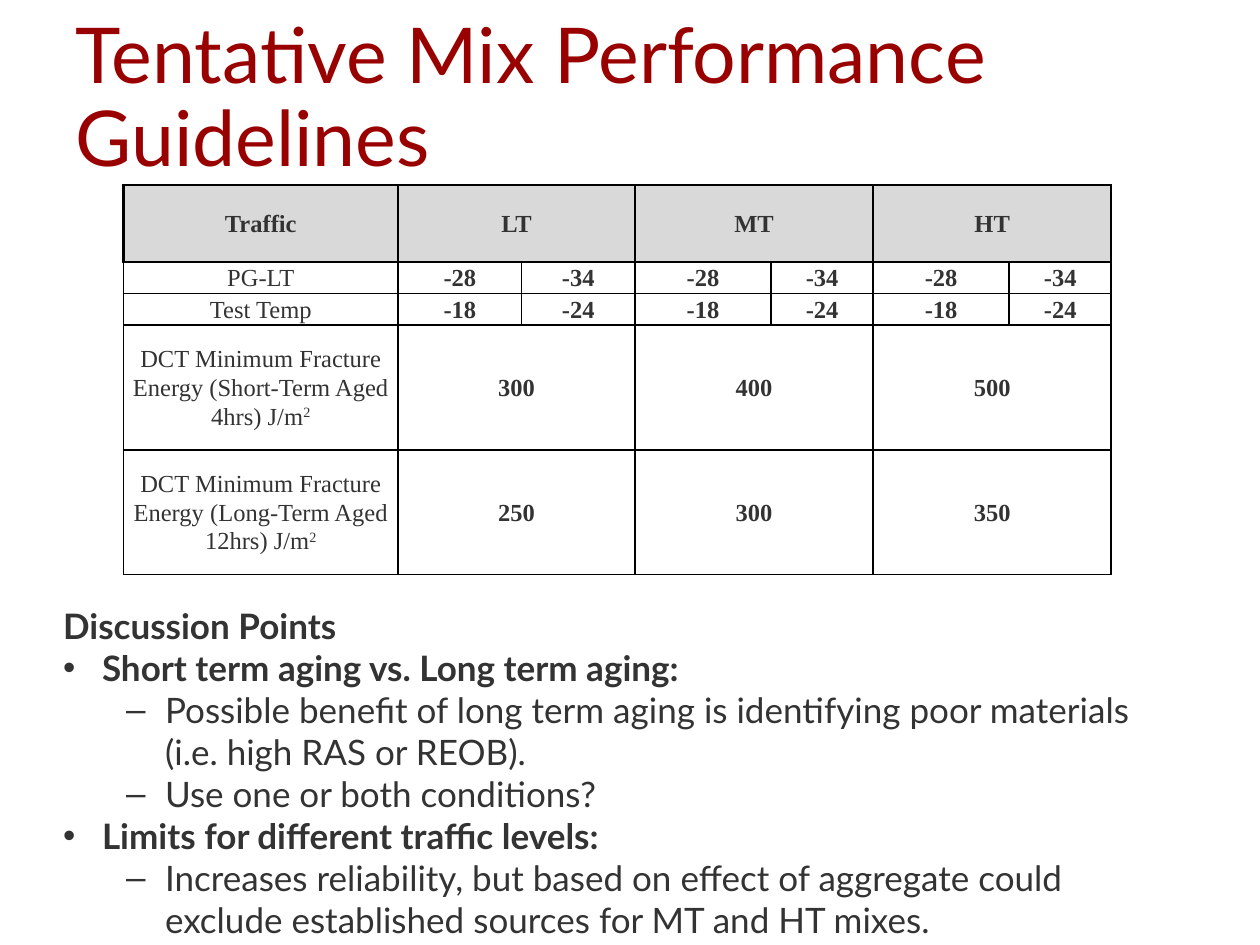
import lxml.etree
import pptx
import pptx.dml.color
import pptx.enum.text
import pptx.oxml.ns
import pptx.util

Inches = pptx.util.Inches
Pt = pptx.util.Pt
PP_ALIGN = pptx.enum.text.PP_ALIGN
MSO_ANCHOR = pptx.enum.text.MSO_ANCHOR
MSO_AUTO_SIZE = pptx.enum.text.MSO_AUTO_SIZE
qn = pptx.oxml.ns.qn

COLORS = {"title": "990000", "text": "333333", "header": "D9D9D9", "line": "000000"}

COL_WIDTHS = [2.18] + [0.98, 0.9] + [1.08, 0.81] * 2
ROW_HEIGHTS = [0.61, 0.25, 0.25, 0.99, 0.99]
ROWS = [
    ("Traffic", ["LT", "MT", "HT"]),
    ("PG-LT", ["-28", "-34"] * 3),
    ("Test Temp", ["-18", "-24"] * 3),
    ("DCT Minimum Fracture Energy (Short-Term Aged 4hrs) J/m^2", ["300", "400", "500"]),
    ("DCT Minimum Fracture Energy (Long-Term Aged 12hrs) J/m^2", ["250", "300", "350"]),
]
POINTS = [
    ("heading", "Discussion Points"),
    ("topic", "Short term aging vs. Long term aging:"),
    ("detail", "Possible benefit of long term aging is identifying poor materials "
               "(i.e. high RAS or REOB)."),
    ("detail", "Use one or both conditions?"),
    ("topic", "Limits for different traffic levels:"),
    ("detail", "Increases reliability, but based on effect of aggregate could "
               "exclude established sources for MT and HT mixes."),
]
LEVELS = {
    "heading": dict(level=0, margin=0, hanging=0, bullet=None, bold=True),
    "topic": dict(level=0, margin=0.31, hanging=0.31, bullet="•", bold=True),
    "detail": dict(level=1, margin=0.81, hanging=0.31, bullet="‒", bold=False),
}


def add_text(p, text, font="Lato", size=20, color="text", bold=False):
    """Add text to a paragraph, raising whatever follows a caret."""
    for i, part in enumerate(text.split("^")):
        r = p.add_run()
        r.text = part
        r.font.name = font
        r.font.size = Pt(size)
        r.font.bold = bold
        r.font.color.rgb = pptx.dml.color.RGBColor.from_string(COLORS[color])
        if i:
            r.font._element.set("baseline", "30000")


class Deck:
    """Hold the style and the current slide."""

    def __init__(self, prs):
        self.prs = prs
        self.s = prs.slides.add_slide(prs.slide_layouts[1])

    def place(self, sp, left, top, width, height):
        """Move and size a shape, in inches."""
        sp.left, sp.top = Inches(left), Inches(top)
        sp.width, sp.height = Inches(width), Inches(height)

    def title(self, text, *box):
        """Fill the title placeholder."""
        sp = self.s.shapes.title
        self.place(sp, *box)
        tf = sp.text_frame
        tf.auto_size = MSO_AUTO_SIZE.NONE
        tf.vertical_anchor = MSO_ANCHOR.MIDDLE
        p = tf.paragraphs[0]
        p.alignment = PP_ALIGN.LEFT
        p.line_spacing = 0.9
        add_text(p, text, size=44, color="title")

    def body(self, points, *box):
        """Fill the body placeholder with a bulleted list."""
        sp = self.s.placeholders[1]
        self.place(sp, *box)
        tf = sp.text_frame
        tf.auto_size = MSO_AUTO_SIZE.SHAPE_TO_FIT_TEXT
        for i, (kind, text) in enumerate(points):
            p = tf.add_paragraph() if i else tf.paragraphs[0]
            style = LEVELS[kind]
            p.level = style["level"]
            p.space_before = Pt(0)
            pPr = p._p.get_or_add_pPr()
            pPr.set("marL", str(Inches(style["margin"])))
            pPr.set("indent", str(-Inches(style["hanging"])))
            if style["bullet"]:
                lxml.etree.SubElement(pPr, qn("a:buChar"), char=style["bullet"])
            else:
                lxml.etree.SubElement(pPr, qn("a:buNone"))
            add_text(p, text, bold=style["bold"])

    def borders(self, cell, widths):
        """Draw the left, right, top and bottom borders of a cell."""
        tcPr = cell._tc.get_or_add_tcPr()
        for side, width in zip("LRTB", widths):
            ln = lxml.etree.SubElement(tcPr, qn("a:ln" + side), w=str(Pt(width)))
            fill = lxml.etree.SubElement(ln, qn("a:solidFill"))
            lxml.etree.SubElement(fill, qn("a:srgbClr"), val=COLORS["line"])

    def cell_text(self, cell, text, bold):
        """Write centred text in a cell."""
        p = cell.text_frame.paragraphs[0]
        p.alignment = PP_ALIGN.CENTER
        p.line_spacing = 1.06
        add_text(p, text, font="Times New Roman", size=14, bold=bold)

    def table(self, rows, left, top):
        """Add the guideline table, pairing columns where a row has three values."""
        frame = self.s.shapes.add_table(
            len(ROW_HEIGHTS), len(COL_WIDTHS), Inches(left), Inches(top),
            Inches(sum(COL_WIDTHS)), Inches(sum(ROW_HEIGHTS)))
        table = frame.table
        table.first_row = table.horz_banding = False
        for col, width in zip(table.columns, COL_WIDTHS):
            col.width = Inches(width)
        last = len(COL_WIDTHS) - 1
        for i, (label, values) in enumerate(rows):
            table.rows[i].height = Inches(ROW_HEIGHTS[i])
            header = i == 0
            for j in range(last + 1):
                cell = table.cell(i, j)
                cell.vertical_anchor = MSO_ANCHOR.MIDDLE
                cell.margin_left = cell.margin_right = Inches(0.04)
                cell.margin_top = cell.margin_bottom = 0
                self.borders(cell, (
                    1.5 if header and j == 0 else 1,
                    1.5 if header and j == last else 1,
                    1.5 if i < 2 else 1,
                    1.5 if header else 1))
                if header:
                    cell.fill.solid()
                    cell.fill.fore_color.rgb = pptx.dml.color.RGBColor.from_string(
                        COLORS["header"])
                else:
                    cell.fill.background()
            self.cell_text(table.cell(i, 0), label, bold=header)
            span = last // len(values)
            for k, value in enumerate(values):
                cell = table.cell(i, 1 + k * span)
                if span > 1:
                    cell.merge(table.cell(i, (k + 1) * span))
                self.cell_text(cell, value, bold=True)


def main():
    """Build the slide and save it."""
    prs = pptx.Presentation()
    prs.slide_width, prs.slide_height = Inches(10), Inches(7.5)
    deck = Deck(prs)
    deck.title("Tentative Mix Performance Guidelines", 0.5, 0.32, 9, 0.95)
    deck.table(ROWS, 0.98, 1.47)
    deck.body(POINTS, 0.4, 4.75, 9, 2.79)
    prs.save("out.pptx")


if __name__ == "__main__":
    main()
